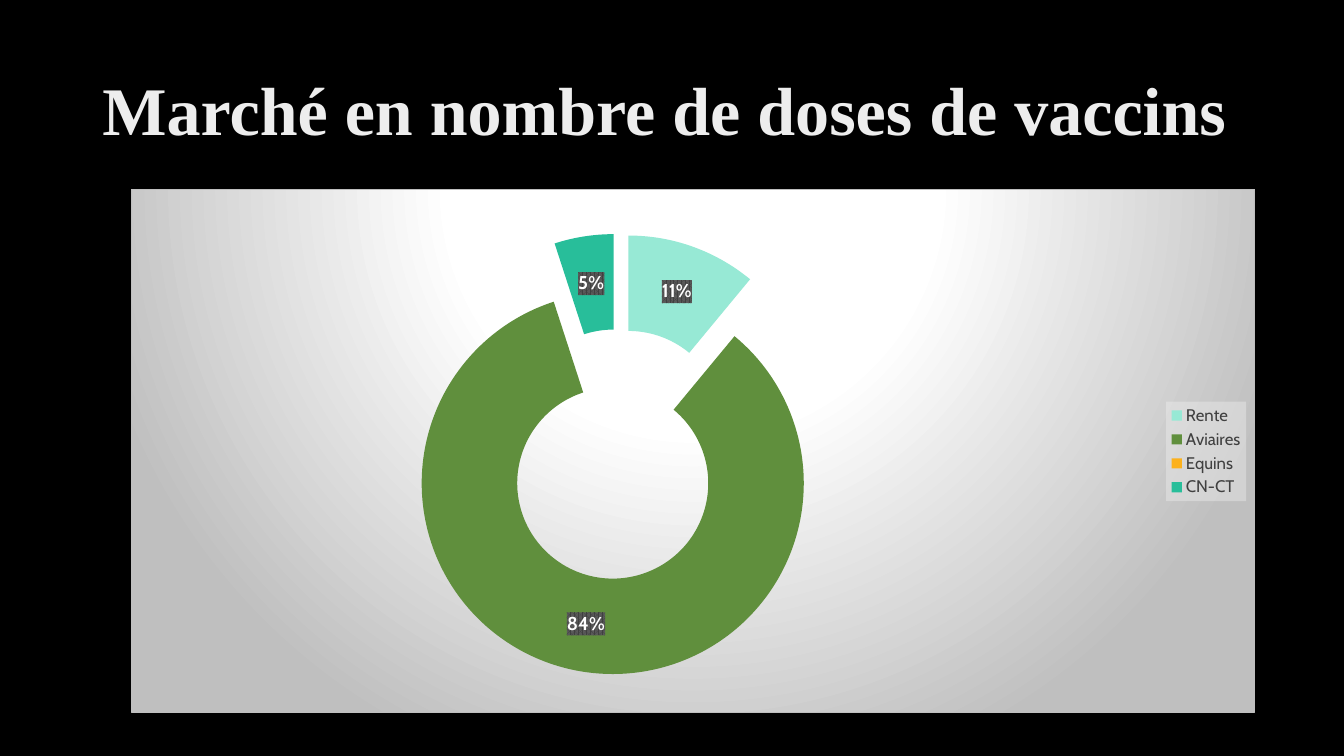
from collections import namedtuple
from dataclasses import dataclass

from lxml.etree import SubElement
from pptx import Presentation
from pptx.chart.data import CategoryChartData
from pptx.dml.color import RGBColor
from pptx.enum.chart import XL_CHART_TYPE, XL_LEGEND_POSITION
from pptx.enum.text import MSO_ANCHOR, MSO_AUTO_SIZE, PP_ALIGN
from pptx.oxml import parse_xml
from pptx.oxml.ns import nsdecls, qn
from pptx.util import Pt

Box = namedtuple("Box", "left top width height")


@dataclass(frozen=True)
class Theme:
    background: str = "000000"
    title_stops: tuple = ((0, "BFBFBF"), (28, "EDEDED"), (100, "FFFFFF"))
    panel_stops: tuple = ((0, "FFFFFF"), (39, "FFFFFF"), (100, "BFBFBF"))
    border: str = "BFBFBF"
    label: str = "FFFFFF"
    label_pattern: tuple = ("404040", "595959")
    legend_text: str = "404040"
    legend_fill: str = "F2F2F2"
    title_font: str = "Times New Roman"
    chart_font: str = "Cabin"
    title_size: float = 48.6
    chart_size: float = 10
    legend_size: float = 12
    label_size: float = 13.3


THEME = Theme()
SLICES = (
    ("Rente", 11, "97E9D5"),
    ("Aviaires", 84, "608F3D"),
    ("Equins", 0, "FCB11C"),
    ("CN-CT", 5, "28BE9A"),
)
PLOT_AREA = {"x": 0.237, "y": 0.043, "w": 0.393, "h": 0.925}
EXPLOSION = 31


def color_xml(color, extra=""):
    return f'<a:srgbClr val="{color}">{extra}</a:srgbClr>'


def gradient_xml(stops, direction):
    stop_list = "".join(
        f'<a:gs pos="{position * 1000}">{color_xml(color)}</a:gs>' for position, color in stops
    )
    return f'<a:gradFill {nsdecls("a")}><a:gsLst>{stop_list}</a:gsLst>{direction}</a:gradFill>'


def shape_properties(content):
    return parse_xml(f'<c:spPr {nsdecls("c", "a")}>{content}</c:spPr>')


def style_font(font, name, size, color=None, bold=None):
    font.name = name
    font.size = Pt(size)
    font.bold = bold
    if color:
        font.color.rgb = RGBColor.from_string(color)


def place(shape, box):
    shape.left, shape.top, shape.width, shape.height = (Pt(length) for length in box)


def add_title(page, box, text):
    title = page.shapes.title
    place(title, box)
    frame = title.text_frame
    frame.text = text
    frame.word_wrap = True
    frame.auto_size = MSO_AUTO_SIZE.NONE
    frame.vertical_anchor = MSO_ANCHOR.MIDDLE
    para = frame.paragraphs[0]
    para.alignment = PP_ALIGN.LEFT
    para.line_spacing = 0.9
    style_font(para.font, THEME.title_font, THEME.title_size, bold=True)
    direction = '<a:lin ang="4800000" scaled="0"/>'
    properties = para._p.find(".//" + qn("a:defRPr"))
    properties.insert(0, parse_xml(gradient_xml(THEME.title_stops, direction)))


def style_panel(chart):
    direction = '<a:path path="circle"><a:fillToRect l="50000" t="-80000" r="50000" b="180000"/></a:path>'
    border = f'<a:ln w="{Pt(0.75)}"><a:solidFill>{color_xml(THEME.border)}</a:solidFill></a:ln>'
    panel = shape_properties(gradient_xml(THEME.panel_stops, direction) + border)
    chart._chartSpace.find(qn("c:chart")).addnext(panel)


def set_plot_area(chart):
    plot_area = chart._chartSpace.find(".//" + qn("c:plotArea"))
    for old_layout in plot_area.findall(qn("c:layout")):
        plot_area.remove(old_layout)
    layout = parse_xml(f'<c:layout {nsdecls("c")}/>')
    manual = SubElement(layout, qn("c:manualLayout"))
    SubElement(manual, qn("c:layoutTarget")).set("val", "inner")
    for axis in "xy":
        SubElement(manual, qn(f"c:{axis}Mode")).set("val", "edge")
    for side, share in PLOT_AREA.items():
        SubElement(manual, qn(f"c:{side}")).set("val", str(share))
    plot_area.insert(0, layout)


def style_slices(series):
    explosion = parse_xml(f'<c:explosion {nsdecls("c")} val="{EXPLOSION}"/>')
    series._element.find(qn("c:tx")).addnext(explosion)
    for index, (_, _, color) in enumerate(SLICES):
        fill = series.points[index].format.fill
        fill.solid()
        fill.fore_color.rgb = RGBColor.from_string(color)


def style_labels(series):
    labels = series.data_labels
    labels.show_percentage = True
    labels.show_value = False
    style_font(labels.font, THEME.chart_font, THEME.label_size, THEME.label, True)
    front, back = THEME.label_pattern
    pattern = shape_properties(
        f'<a:pattFill prst="pct75"><a:fgClr>{color_xml(front)}</a:fgClr>'
        f"<a:bgClr>{color_xml(back)}</a:bgClr></a:pattFill>"
    )
    labels._element.find(qn("c:txPr")).addprevious(pattern)
    empty_slices = [index for index, (_, share, _) in enumerate(SLICES) if share == 0]
    for position, index in enumerate(empty_slices):
        hidden = parse_xml(
            f'<c:dLbl {nsdecls("c")}><c:idx val="{index}"/><c:delete val="1"/></c:dLbl>'
        )
        labels._element.insert(position, hidden)


def style_legend(chart):
    chart.has_legend = True
    legend = chart.legend
    legend.position = XL_LEGEND_POSITION.RIGHT
    legend.include_in_layout = False
    style_font(legend.font, THEME.chart_font, THEME.legend_size, THEME.legend_text)
    tint = color_xml(THEME.legend_fill, '<a:alpha val="39000"/>')
    backdrop = shape_properties(f"<a:solidFill>{tint}</a:solidFill>")
    legend._element.find(qn("c:txPr")).addprevious(backdrop)


def add_dose_chart(page, box):
    names, shares, _ = zip(*SLICES)
    data = CategoryChartData()
    data.categories = names
    data.add_series("Series 1", shares)
    chart = page.shapes.add_chart(
        XL_CHART_TYPE.DOUGHNUT, *(Pt(length) for length in box), data
    ).chart
    chart.has_title = False
    style_font(chart.font, THEME.chart_font, THEME.chart_size, THEME.label)
    series = chart.plots[0].series[0]
    style_panel(chart)
    set_plot_area(chart)
    style_slices(series)
    style_labels(series)
    style_legend(chart)


def build_market_page(deck, box):
    page = deck.slides.add_slide(deck.slide_layouts[5])
    fill = page.background.fill
    fill.solid()
    fill.fore_color.rgb = RGBColor.from_string(THEME.background)
    title_box = Box(box.left + 66, box.top + 28.8, box.width - 132, 104.4)
    chart_box = Box(box.left + 93.6, box.top + 135.2, box.width - 157.2, 374.4)
    add_title(page, title_box, "Marché en nombre de doses de vaccins")
    add_dose_chart(page, chart_box)


def main():
    deck = Presentation()
    deck.slide_width, deck.slide_height = Pt(960), Pt(540)
    build_market_page(deck, Box(0, 0, 960, 540))
    deck.save("out.pptx")


if __name__ == "__main__":
    main()
